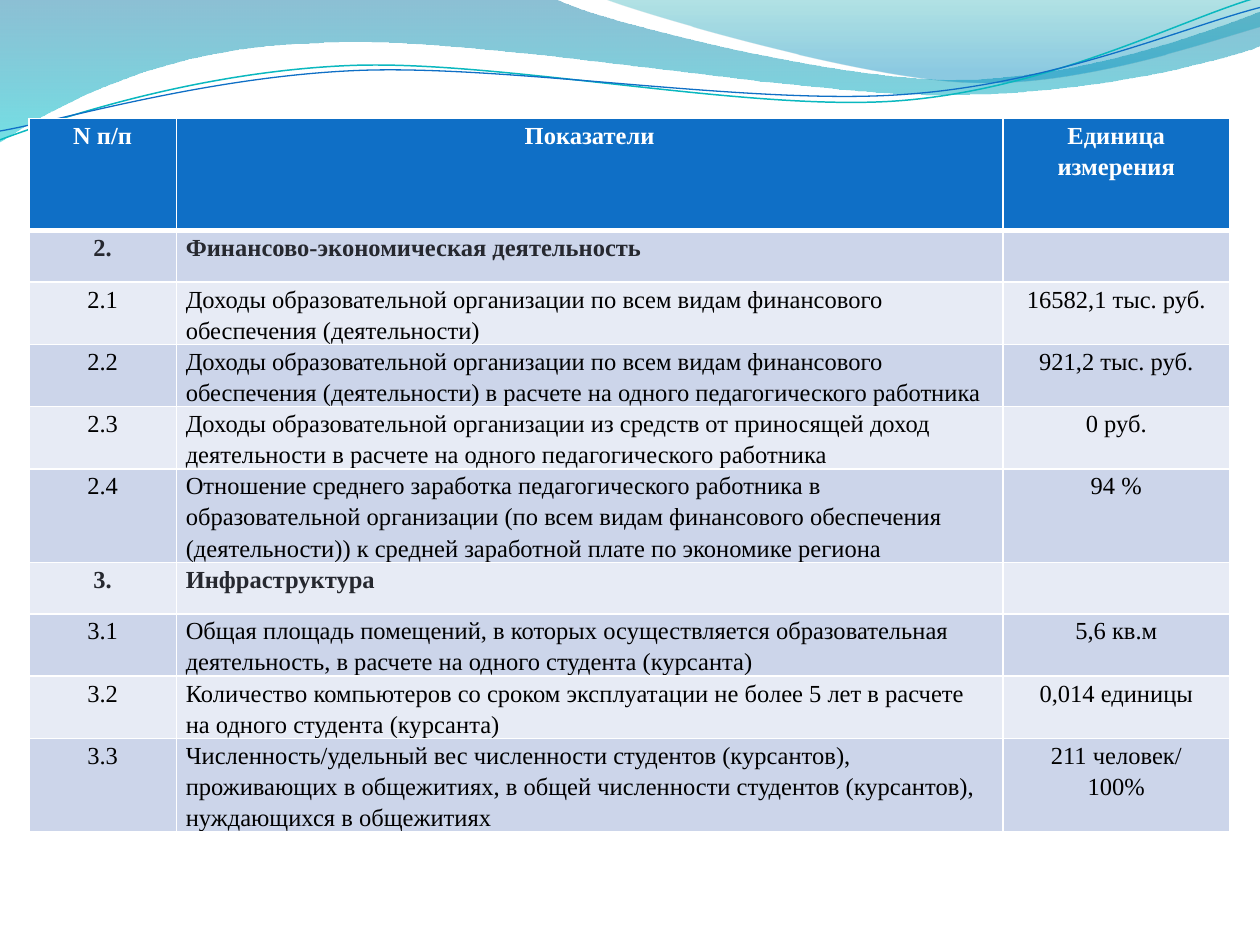
from dataclasses import dataclass
from math import cos, radians, sin

from lxml.etree import SubElement
from pptx import Presentation
from pptx.dml.color import RGBColor
from pptx.enum.text import PP_ALIGN
from pptx.oxml.ns import qn
from pptx.util import Inches, Pt


@dataclass(frozen=True)
class Theme:
    font: str = "Times New Roman"
    size: int = 14
    spacing: float = 1.15
    header: str = "0F6FC6"
    bands: tuple = ("CCD5EA", "E7EBF5")
    white: str = "FFFFFF"
    section: str = "26282F"
    body: str = "000000"
    teal: str = "0AB8BF"
    wide_wave: tuple = ((0, "0074A1", 45), (100, "00C6CF", 55))
    right_wave: tuple = ((0, "00A1A9", 30), (80, "008BBF", 45))


WIDE_WAVE = [
    (0, 0), (4.4, -0.01),
    (4.76, 0.17, 6.64, 0.63, 7.58, 0.63), (8.53, 0.63, 9.58, 0.26, 10, 0.09),
    (10.01, 0.36),
    (9.83, 0.44, 8.7, 0.76, 7.46, 0.75), (6.22, 0.75, 3.82, 0.28, 2.57, 0.34),
    (1.29, 0.36, 0.46, 0.83, -0.01, 1.13), (0, 0),
]
RIGHT_WAVE = [
    (4.79, -0.01),
    (5.09, 0.11, 6.82, 0.62, 7.69, 0.65), (8.56, 0.69, 9.61, 0.32, 10, 0.21),
    (10, 0), (4.79, -0.01),
]
TEAL_LINE = [
    (0, 1.11),
    (0.48, 0.93, 1.58, 0.57, 2.77, 0.52), (3.95, 0.47, 5.93, 0.89, 7.13, 0.8),
    (8.33, 0.71, 9.38, 0.15, 9.98, -0.02),
]
BLUE_LINE = [
    (0, 1.04),
    (0.47, 0.96, 1.64, 0.61, 2.83, 0.56), (4.03, 0.51, 5.97, 0.84, 7.17, 0.75),
    (8.36, 0.67, 9.41, 0.21, 10, 0.06),
]
LINE_TILT = 2.7
COLUMN_WIDTHS = (1.17, 6.56, 1.8)
HEADER_HEIGHT, ROW_HEIGHT, FRAME_HEIGHT = 0.89, 0.41, 6
ROWS = [
    ("N п/п", "Показатели", "Единица измерения"),
    ("2.", "Финансово-экономическая деятельность", ""),
    ("2.1", "Доходы образовательной организации по всем видам финансового "
            "обеспечения (деятельности)", "16582,1 тыс. руб."),
    ("2.2", "Доходы образовательной организации по всем видам финансового "
            "обеспечения (деятельности) в расчете на одного педагогического работника",
     "921,2 тыс. руб."),
    ("2.3", "Доходы образовательной организации из средств от приносящей доход "
            "деятельности в расчете на одного педагогического работника", "0 руб."),
    ("2.4", "Отношение среднего заработка педагогического работника в образовательной "
            "организации (по всем видам финансового обеспечения (деятельности)) "
            "к средней заработной плате по экономике региона", "94 %"),
    ("3.", "Инфраструктура", ""),
    ("3.1", "Общая площадь помещений, в которых осуществляется образовательная "
            "деятельность, в расчете на одного студента (курсанта)", "5,6 кв.м"),
    ("3.2", "Количество компьютеров со сроком эксплуатации не более 5 лет в расчете "
            "на одного студента (курсанта)", "0,014 единицы"),
    ("3.3", "Численность/удельный вес численности студентов (курсантов), проживающих "
            "в общежитиях, в общей численности студентов (курсантов), нуждающихся "
            "в общежитиях", "211 человек/\n100%"),
]


def tilt(point, center, angle):
    """Turn a point clockwise around a center."""
    dx, dy = point[0] - center[0], point[1] - center[1]
    c, s = cos(radians(angle)), sin(radians(angle))
    return center[0] + dx * c - dy * s, center[1] + dx * s + dy * c


def write_text(frame, text, *, font, size, color, bold, align, spacing):
    """Fill a text frame with one formatted paragraph per line of text."""
    for index, line in enumerate(text.split("\n")):
        para = frame.add_paragraph() if index else frame.paragraphs[0]
        para.alignment, para.line_spacing = align, spacing
        span = para.add_run()
        span.text = line
        span.font.name, span.font.size, span.font.bold = font, Pt(size), bold
        span.font.color.rgb = RGBColor.from_string(color)


class Painter:
    """Draw styled elements on the current slide."""

    def __init__(self, page, theme):
        """Keep the slide and its style."""
        self.page, self.theme = page, theme

    def outline(self, shapes, segments, close, center=(0, 0), angle=0):
        """Add a freeform of straight and cubic segments."""
        points = [tilt(segment[i:i + 2], center, angle)
                  for segment in segments for i in range(0, len(segment), 2)]
        points = [(Inches(x), Inches(y)) for x, y in points]
        builder = shapes.build_freeform(*points[0])
        builder.add_line_segments(points[1:], close=close)
        shape = builder.convert_to_shape()
        shape.shadow.inherit = False
        steps = iter(list(shape.element.spPr.iter(qn("a:lnTo"))))
        for segment in segments[1:]:
            step = next(steps)
            if len(segment) == 6:
                step.tag = qn("a:cubicBezTo")
                for _ in range(2):
                    extra = next(steps)
                    step.append(extra[0])
                    extra.getparent().remove(extra)
        return shape

    def wave(self, segments, stops):
        """Add a closed wave with a translucent vertical gradient."""
        shape = self.outline(self.page.shapes, segments, True)
        shape.line.fill.background()
        shape.fill.gradient()
        shape.fill.gradient_angle = 270
        for stop, (position, color, _) in zip(shape.fill.gradient_stops, stops):
            stop.position = position / 100
            stop.color.rgb = RGBColor.from_string(color)
        colors = shape.element.spPr.iter(qn("a:srgbClr"))
        for node, (_, _, opacity) in zip(list(colors), stops):
            SubElement(node, qn("a:alpha"), val=str(opacity * 1000))

    def curves(self, *lines):
        """Add a group of tilted open curves."""
        group = self.page.shapes.add_group_shape()
        for segments, center, color, width in lines:
            shape = self.outline(group.shapes, segments, False, center, LINE_TILT)
            shape.rotation = 360 - LINE_TILT
            shape.fill.background()
            shape.line.color.rgb = RGBColor.from_string(color)
            shape.line.width = Pt(width)

    def borders(self, cell, bottom):
        """Draw white borders around a cell."""
        properties = cell._tc.get_or_add_tcPr()
        for side, width in (("L", 1), ("R", 1), ("T", 1), ("B", bottom)):
            line = SubElement(properties, qn(f"a:ln{side}"), w=str(Pt(width)))
            fill = SubElement(line, qn("a:solidFill"))
            SubElement(fill, qn("a:srgbClr"), val=self.theme.white)

    def cell(self, cell, text, *, fill, color, bold, align, bottom=1):
        """Format one table cell and write its text."""
        self.borders(cell, bottom)
        cell.fill.solid()
        cell.fill.fore_color.rgb = RGBColor.from_string(fill)
        if text:
            cell.margin_left = cell.margin_right = Pt(5.4)
            cell.margin_top = cell.margin_bottom = 0
            write_text(cell.text_frame, text, font=self.theme.font, size=self.theme.size,
                       color=color, bold=bold, align=align, spacing=self.theme.spacing)

    def table(self, rows, left, top):
        """Add the indicator table with its header, sections and bands."""
        theme = self.theme
        frame = self.page.shapes.add_table(
            len(rows), len(COLUMN_WIDTHS), Inches(left), Inches(top),
            Inches(sum(COLUMN_WIDTHS)), Inches(FRAME_HEIGHT))
        grid = frame.table
        for column, width in zip(grid.columns, COLUMN_WIDTHS):
            column.width = Inches(width)
        for r, values in enumerate(rows):
            is_header, is_section = r == 0, values[0].endswith(".")
            grid.rows[r].height = Inches(HEADER_HEIGHT if is_header else ROW_HEIGHT)
            fill = theme.header if is_header else theme.bands[(r - 1) % 2]
            color = theme.white if is_header else theme.section if is_section else theme.body
            for c, text in enumerate(values):
                centred = is_header or c != 1
                self.cell(grid.cell(r, c), text, fill=fill, color=color,
                          bold=is_header or is_section,
                          align=PP_ALIGN.CENTER if centred else PP_ALIGN.LEFT,
                          bottom=3 if is_header else 1)
        frame.height = Inches(FRAME_HEIGHT)


def main():
    """Build and save the deck."""
    deck = Presentation()
    deck.slide_width, deck.slide_height = Inches(10), Inches(7.5)
    theme = Theme()
    painter = Painter(deck.slides.add_slide(deck.slide_layouts[6]), theme)
    painter.wave(WIDE_WAVE, theme.wide_wave)
    painter.wave(RIGHT_WAVE, theme.right_wave)
    painter.curves((TEAL_LINE, (4.99, 0.58), theme.teal, 0.85),
                   (BLUE_LINE, (5, 0.59), theme.header, 0.75))
    painter.table(ROWS, 0.23, 0.94)
    deck.save("out.pptx")


if __name__ == "__main__":
    main()
